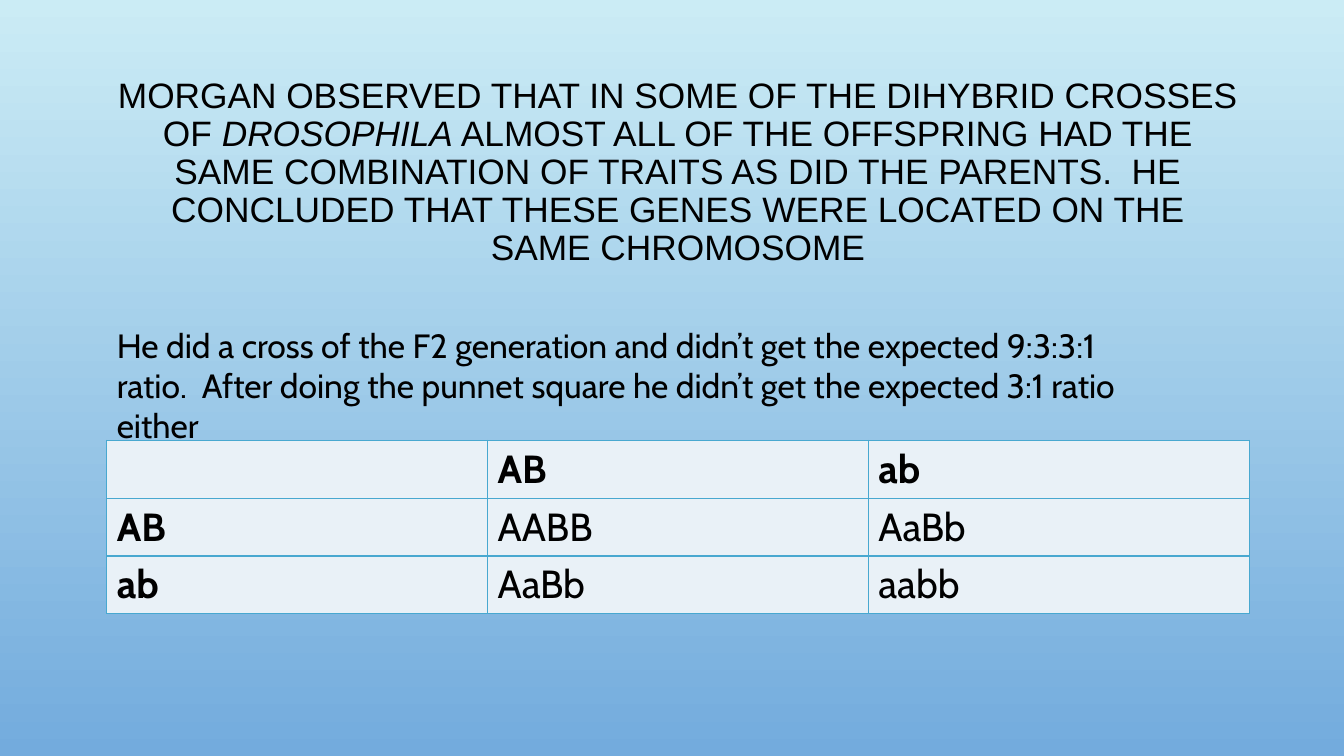
from pptx import Presentation
from pptx.dml.color import RGBColor as RGB
from pptx.enum.text import MSO_ANCHOR as Anchor, MSO_AUTO_SIZE as Auto, PP_ALIGN as Align
from pptx.oxml import parse_xml as parse
from pptx.oxml.ns import nsdecls as decls
from pptx.util import Inches, Pt


def color(code):
    return RGB.from_string(code)


class Deck:
    ink = "000000"
    pale = "E9F1F7"
    edge = "48A8D0"
    sky = ("CBECF5", "73ABDD")
    head = "Arial"
    body = "Cabin"

    def __init__(self):
        self.prs = Presentation()
        self.prs.slide_width = Inches(13.33)
        self.prs.slide_height = Inches(7.5)
        self.slide = self.prs.slides.add_slide(self.prs.slide_layouts[5])

    def style(self, par, face, size, bold=False):
        font = par.font
        font.name = face
        font.size = Pt(size)
        font.bold = bold
        font.color.rgb = color(self.ink)

    def back(self):
        fill = self.slide.background.fill
        fill.gradient()
        fill.gradient_angle = 270
        for stop, code in zip(fill.gradient_stops, self.sky):
            stop.color.rgb = color(code)

    def title(self, box, parts):
        shape = self.slide.shapes.title
        shape.left, shape.top, shape.width, shape.height = map(Inches, box)
        frame = shape.text_frame
        frame.word_wrap = True
        frame.auto_size = Auto.NONE
        frame.vertical_anchor = Anchor.MIDDLE
        par = frame.paragraphs[0]
        par.alignment = Align.CENTER
        par.line_spacing = 0.9
        self.style(par, self.head, 25.2)
        for text, slant in parts:
            run = par.add_run()
            run.text = text
            run.font.italic = slant

    def text(self, box, words):
        frame = self.slide.shapes.add_textbox(*map(Inches, box)).text_frame
        frame.word_wrap = True
        frame.auto_size = Auto.SHAPE_TO_FIT_TEXT
        par = frame.paragraphs[0]
        par.text = words
        self.style(par, self.body, 24)

    def border(self, cell):
        props = cell._tc.get_or_add_tcPr()
        for spot, side in enumerate(("lnL", "lnR", "lnT", "lnB")):
            props.insert(spot, parse(
                f'<a:{side} {decls("a")} w="{Pt(1)}"><a:solidFill>'
                f'<a:srgbClr val="{self.edge}"/></a:solidFill></a:{side}>'))

    def table(self, box, rows):
        grid = self.slide.shapes.add_table(
            len(rows), len(rows[0]), *map(Inches, box)).table
        grid.first_row = grid.horz_banding = False
        for r, row in enumerate(rows):
            for c, word in enumerate(row):
                cell = grid.cell(r, c)
                cell.fill.solid()
                cell.fill.fore_color.rgb = color(self.pale)
                self.border(cell)
                par = cell.text_frame.paragraphs[0]
                par.text = word
                self.style(par, self.body, 28, r == 0 or c == 0)


def main():
    deck = Deck()
    deck.back()
    deck.title((1.06, 0.63, 11.33, 2.17), [
        ("MORGAN OBSERVED THAT IN SOME OF THE DIHYBRID CROSSES OF ", False),
        ("DROSOPHILA", True),
        (" ALMOST ALL OF THE OFFSPRING HAD THE SAME COMBINATION OF TRAITS "
         "AS DID THE PARENTS.  HE CONCLUDED THAT THESE GENES WERE LOCATED "
         "ON THE SAME CHROMOSOME", False),
    ])
    deck.table((1.06, 4.37, 11.33, 1.71), [
        ("", "AB", "ab"),
        ("AB", "AABB", "AaBb"),
        ("ab", "AaBb", "aabb"),
    ])
    deck.text((1.06, 3.17, 10.58, 0.91),
              "He did a cross of the F2 generation and didn’t get the expected "
              "9:3:3:1 ratio.  After doing the punnet square he didn’t get the "
              "expected 3:1 ratio either")
    deck.prs.save("out.pptx")


if __name__ == "__main__":
    main()
